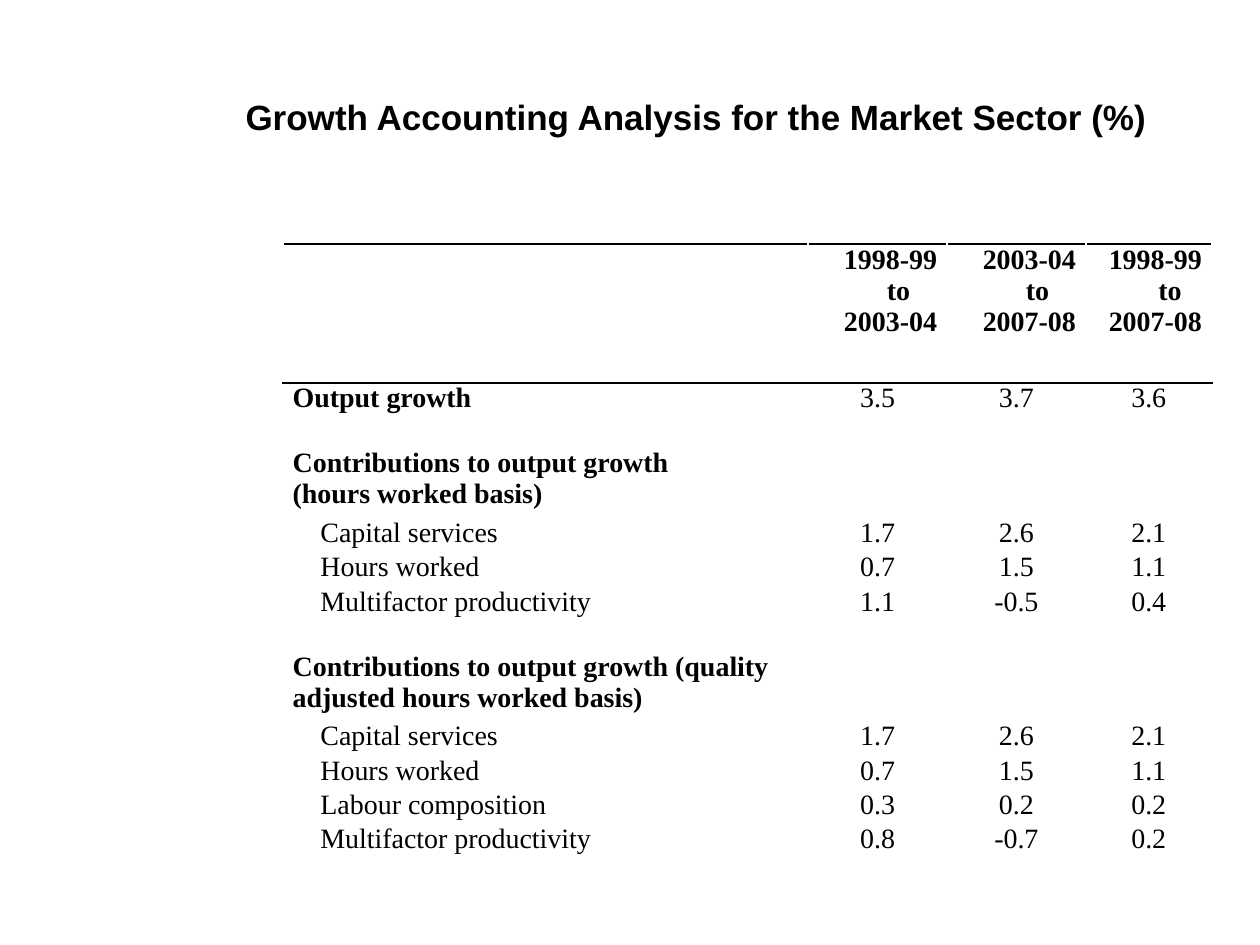
from lxml.etree import SubElement
from pptx import Presentation
from pptx.dml.color import RGBColor
from pptx.enum.text import MSO_ANCHOR, PP_ALIGN
from pptx.oxml.ns import qn
from pptx.util import Cm, Pt

HUES = {"ink": "000000"}
SERIF = "Times New Roman"
PAD = 0.2
STEP = 0.56  # indent of the items under a heading
LOW = 0.62  # gap above a heading
COLS = [10.59, 2.8, 2.8, 2.54]
LINE, HEAD = 0.69, 2.03  # heights of a figure row and a heading row
TOP, LAST = 2.8, 4.22

SPANS = [
    ("1998-99", "to", "2003-04"),
    ("2003-04", "to", "2007-08"),
    ("1998-99", "to", "2007-08"),
]
CAPITAL = ("Capital services", "1.7", "2.6", "2.1")
HOURS = ("Hours worked", "0.7", "1.5", "1.1")
ROWS = [
    ("Output growth", "3.5", "3.7", "3.6"),
    ("Contributions to output growth\n(hours worked basis)",),
    CAPITAL,
    HOURS,
    ("Multifactor productivity", "1.1", "-0.5", "0.4"),
    ("Contributions to output growth (quality adjusted hours worked basis)",),
    CAPITAL,
    HOURS,
    ("Labour composition", "0.3", "0.2", "0.2"),
    ("Multifactor productivity", "0.8", "-0.7", "0.2"),
]


def style(frame, font, size, bold, align):
    for para in frame.paragraphs:
        para.alignment = align
        for run in para.runs:
            run.font.name = font
            run.font.size = Pt(size)
            run.font.bold = bold
            run.font.color.rgb = RGBColor.from_string(HUES["ink"])


def add_title(slide, text):
    box = slide.shapes.add_textbox(Cm(4.7), Cm(0.76), Cm(19.43), Cm(3.18))
    frame = box.text_frame
    frame.word_wrap = True
    frame.vertical_anchor = MSO_ANCHOR.MIDDLE
    frame.text = text
    style(frame, "Arial", 20, True, PP_ALIGN.LEFT)


def add_rule(cell, side):
    line = SubElement(cell._tc.get_or_add_tcPr(), qn("a:" + side), w=str(Pt(1)))
    fill = SubElement(line, qn("a:solidFill"))
    SubElement(fill, qn("a:srgbClr"), val=HUES["ink"])


def fill_cell(cell, text, bold, align, left=PAD, top=0):
    cell.margin_left, cell.margin_right = Cm(left), Cm(PAD)
    cell.margin_top, cell.margin_bottom = Cm(top), Cm(0)
    cell.text_frame.text = text
    style(cell.text_frame, SERIF, 16, bold, align)


def add_grid(slide):
    tall = [TOP] + [LINE if len(row) > 1 else HEAD for row in ROWS]
    tall[-1] = LAST
    shape = slide.shapes.add_table(len(tall), len(COLS), Cm(5.7), Cm(4.92),
                                   Cm(sum(COLS)), Cm(sum(tall)))
    grid = shape.table
    grid.first_row = grid.horz_banding = False
    for col, width in zip(grid.columns, COLS):
        col.width = Cm(width)
    for row, height in zip(grid.rows, tall):
        row.height = Cm(height)

    # Rules above and below the periods
    for col in range(len(COLS)):
        for row, side in [(0, "lnT"), (0, "lnB"), (1, "lnT")]:
            add_rule(grid.cell(row, col), side)
    for cell in grid.iter_cells():
        cell.fill.background()

    # Periods, with the middle word set to the right of centre
    for col, span in enumerate(SPANS, 1):
        cell = grid.cell(0, col)
        fill_cell(cell, "\n".join(span), True, PP_ALIGN.RIGHT)
        word = cell.text_frame.paragraphs[1]
        word.alignment = PP_ALIGN.CENTER
        word._p.get_or_add_pPr().set("marL", str(Cm(0.85)))

    # Headings, items and figures
    for num, (name, *vals) in enumerate(ROWS, 1):
        bold = num == 1 or not vals
        fill_cell(grid.cell(num, 0), name, bold, PP_ALIGN.LEFT,
                  PAD if bold else PAD + STEP, 0 if vals else LOW)
        for col, val in enumerate(vals, 1):
            fill_cell(grid.cell(num, col), val, False, PP_ALIGN.CENTER)


def main():
    deck = Presentation()
    deck.slide_width, deck.slide_height = Cm(25.4), Cm(19.05)
    slide = deck.slides.add_slide(deck.slide_layouts[6])
    add_title(slide, "Growth Accounting Analysis for the Market Sector (%)")
    add_grid(slide)
    deck.save("out.pptx")


if __name__ == "__main__":
    main()
